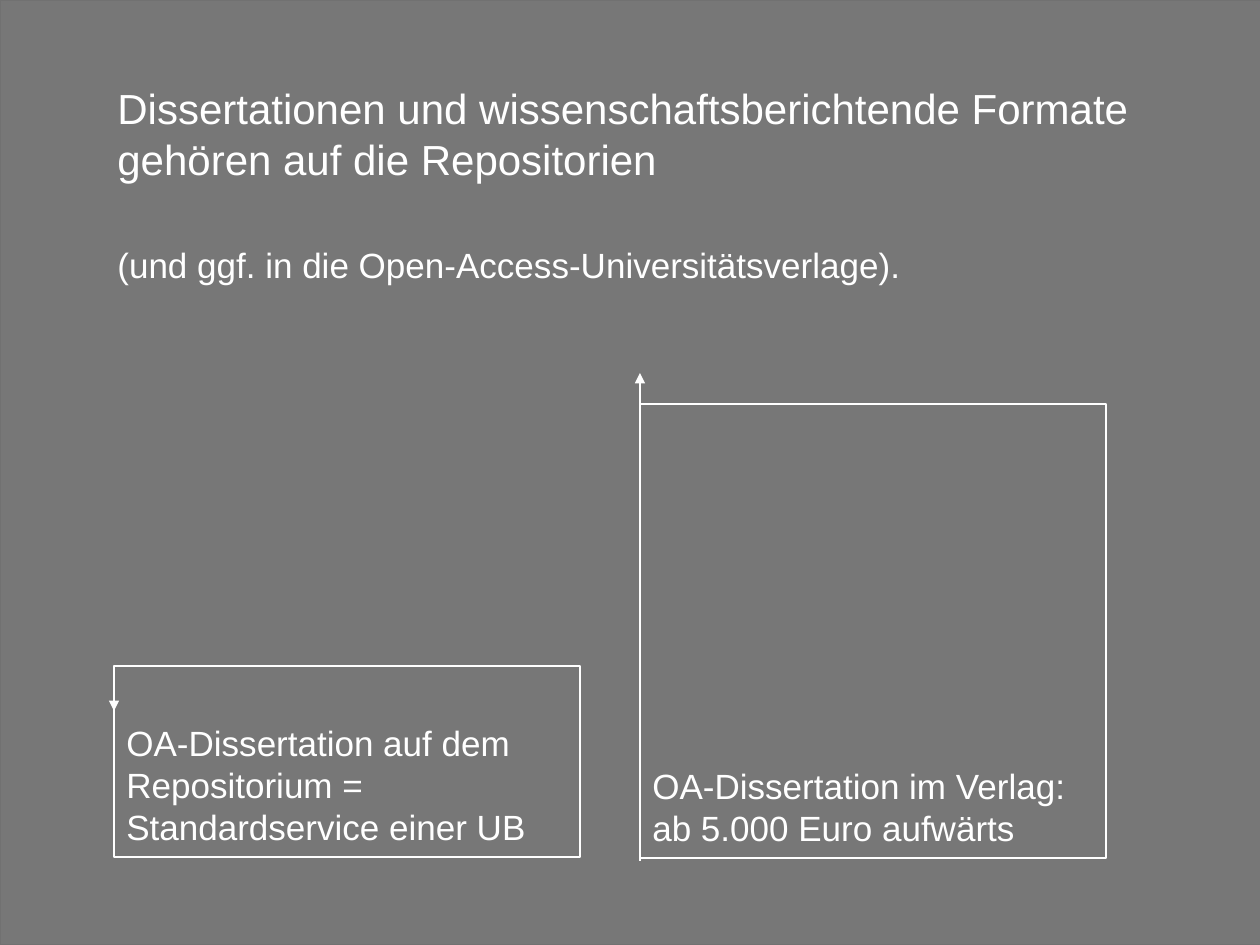
"""Build the slide comparing open-access dissertations in repositories and with publishers."""
from lxml.etree import SubElement
from pptx import Presentation
from pptx.dml.color import RGBColor
from pptx.enum.shapes import MSO_CONNECTOR as Connector, MSO_SHAPE as Shape
from pptx.enum.text import MSO_ANCHOR as Anchor, PP_ALIGN as Align
from pptx.oxml.ns import qn
from pptx.util import Pt

PX = 914400 // 126
COLORS = {"background": "777777", "edge": "717171", "chalk": "FFFFFF"}


def px(length):
    return length * PX


def color(name):
    return RGBColor.from_string(COLORS[name])


def write(frame, lines):
    frame.word_wrap = True
    for index, (text, size, leading, gap) in enumerate(lines):
        paragraph = frame.paragraphs[0] if index == 0 else frame.add_paragraph()
        paragraph.text = text
        paragraph.alignment = Align.LEFT
        paragraph.line_spacing = Pt(leading)
        paragraph.space_before = Pt(gap)
        paragraph.font.name = "Arial"
        paragraph.font.size = Pt(size)
        paragraph.font.color.rgb = color("chalk")


def add_backdrop(slide, width, height):
    backdrop = slide.shapes.add_shape(Shape.RECTANGLE, 0, 0, px(width), px(height))
    backdrop.shadow.inherit = False
    backdrop.fill.solid()
    backdrop.fill.fore_color.rgb = color("background")
    backdrop.line.color.rgb = color("edge")
    backdrop.line.width = Pt(0.75)


def add_heading(slide, left, top, width, height, lines):
    heading = slide.shapes.add_textbox(px(left), px(top), px(width), px(height))
    write(heading.text_frame, lines)


def add_cost_box(slide, left, top, width, height, texts):
    box = slide.shapes.add_shape(Shape.RECTANGLE, px(left), px(top), px(width), px(height))
    box.shadow.inherit = False
    box.fill.background()
    box.line.color.rgb = color("chalk")
    box.line.width = Pt(1)
    box.text_frame.vertical_anchor = Anchor.BOTTOM
    box.text_frame.margin_bottom = px(9)
    write(box.text_frame, [(text, 20, 24, 0) for text in texts])


def add_arrow(slide, x, start, end):
    arrow = slide.shapes.add_connector(Connector.STRAIGHT, px(x), px(start), px(x), px(end))
    arrow.line.color.rgb = color("chalk")
    arrow.line.width = Pt(0.75)
    SubElement(arrow.line._get_or_add_ln(), qn("a:tailEnd"), type="triangle")
    SubElement(arrow._element.spPr, qn("a:effectLst"))


def main():
    deck = Presentation()
    deck.slide_width, deck.slide_height = px(1260), px(945)
    slide = deck.slides.add_slide(deck.slide_layouts[6])
    add_backdrop(slide, 1265, 945)
    add_heading(slide, 105, 76, 1071, 217, [
        ("Dissertationen und wissenschaftsberichtende Formate gehören auf die Repositorien", 24, 29, 0),
        ("(und ggf. in die Open-Access-Universitätsverlage).", 20, 24, 34),
    ])
    publisher_left, repository_left, box_width = 640, 114, 466
    add_cost_box(slide, publisher_left, 404, box_width, 454,
                 ["OA-Dissertation im Verlag:\vab 5.000 Euro aufwärts"])
    add_cost_box(slide, repository_left, 666, box_width, 191,
                 ["OA-Dissertation auf dem Repositorium =", "Standardservice einer UB"])
    add_arrow(slide, publisher_left, 861, 373)
    add_arrow(slide, repository_left, 666, 711)
    deck.save("out.pptx")


if __name__ == "__main__":
    main()
